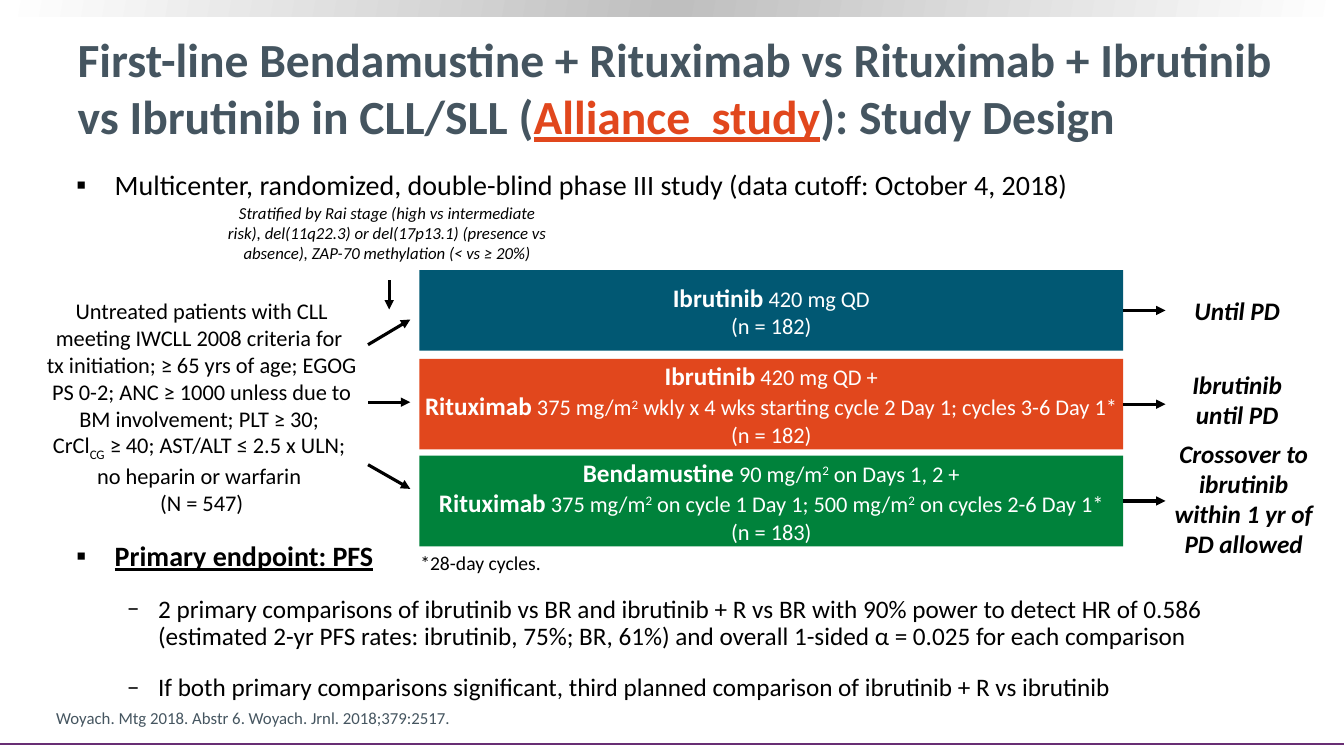
from dataclasses import dataclass
from typing import Any, NamedTuple

from lxml import etree
from pptx import Presentation
from pptx.dml.color import RGBColor
from pptx.enum import shapes, text
from pptx.oxml.ns import qn
from pptx.util import Inches, Pt

BLACK, WHITE, SLATE, ORANGE, PURPLE = "000000", "FFFFFF", "455560", "E1471D", "682E74"
LEFT, CENTER = text.PP_ALIGN.LEFT, text.PP_ALIGN.CENTER
TOP, MIDDLE, BOTTOM = text.MSO_ANCHOR.TOP, text.MSO_ANCHOR.MIDDLE, text.MSO_ANCHOR.BOTTOM


class Box(NamedTuple):
    left: float
    top: float
    width: float
    height: float

    def inches(self) -> list[int]:
        return [Inches(v) for v in self]


class Run(NamedTuple):
    text: str
    size: int
    color: str = BLACK
    bold: bool = False
    italic: bool = False
    underline: bool = False
    baseline: int = 0


Paragraphs = list[list[Run]]


@dataclass
class Label:
    box: Box
    paragraphs: Paragraphs
    align: Any = CENTER
    anchor: Any = TOP
    wrap: bool = True


@dataclass
class Arm:
    top: float
    height: float
    color: str
    paragraphs: Paragraphs
    outcome: str
    outcome_box: Box


@dataclass
class Bullet:
    run: Run
    level: int = 0


def rgb(color: str) -> RGBColor:
    return RGBColor.from_string(color)


def add_run(p: Any, run: Run) -> None:
    for i, piece in enumerate(run.text.split("\n")):
        if i:
            p.add_line_break()
        r = p.add_run()
        r.text = piece
        f = r.font
        f.name, f.size, f.color.rgb = "Calibri", Pt(run.size), rgb(run.color)
        f.bold, f.italic, f.underline = run.bold, run.italic, run.underline
        if run.baseline:
            r._r.get_or_add_rPr().set("baseline", str(run.baseline * 1000))


def fill_text(sp: Any, paragraphs: Paragraphs, align: Any, anchor: Any, wrap: bool = True) -> None:
    tf = sp.text_frame
    tf.word_wrap, tf.vertical_anchor, tf.auto_size = wrap, anchor, text.MSO_AUTO_SIZE.NONE
    for i, runs in enumerate(paragraphs):
        p = tf.paragraphs[0] if i == 0 else tf.add_paragraph()
        p.alignment = align
        for run in runs:
            add_run(p, run)


def add_label(s: Any, label: Label) -> Any:
    sp = s.shapes.add_textbox(*label.box.inches())
    fill_text(sp, label.paragraphs, label.align, label.anchor, label.wrap)
    return sp


def add_rect(s: Any, box: Box, color: str) -> Any:
    sp = s.shapes.add_shape(shapes.MSO_SHAPE.RECTANGLE, *box.inches())
    sp.shadow.inherit = False
    sp.fill.solid()
    sp.fill.fore_color.rgb = rgb(color)
    sp.line.fill.background()
    return sp


def add_line(s: Any, x1: float, y1: float, x2: float, y2: float,
             color: str = BLACK, width: float = 2.25, arrow: bool = True) -> Any:
    line = s.shapes.add_connector(shapes.MSO_CONNECTOR.STRAIGHT, *[Inches(v) for v in (x1, y1, x2, y2)])
    line.line.color.rgb, line.line.width = rgb(color), Pt(width)
    if arrow:
        etree.SubElement(line.line._get_or_add_ln(), qn("a:tailEnd"), type="triangle")
    etree.SubElement(line._element.spPr, qn("a:effectLst"))
    return line


def add_bullets(s: Any, box: Box, bullets: list[Bullet]) -> None:
    sp = add_label(s, Label(box, [[b.run] for b in bullets], LEFT))
    for p, b in zip(sp.text_frame.paragraphs, bullets):
        p.level, p.line_spacing = b.level, 0.9
        p.space_before, p.space_after = Pt(10), Pt(7)
        margin, hang, mark = [(0.38, 0.38, "▪"), (0.81, 0.31, "‒")][b.level]
        pPr = p._p.get_or_add_pPr()
        pPr.set("marL", str(Inches(margin)))
        pPr.set("indent", str(-Inches(hang)))
        etree.SubElement(etree.SubElement(pPr, qn("a:buClr")), qn("a:srgbClr"), val=BLACK)
        etree.SubElement(pPr, qn("a:buFont"), typeface="Calibri")
        etree.SubElement(pPr, qn("a:buChar"), char=mark)


def add_top_band(s: Any) -> None:
    band = add_rect(s, Box(0, 0, 13.33, 0.16), WHITE)
    band.fill.gradient()
    grad = band._element.spPr.find(qn("a:gradFill"))
    for child in list(grad):
        grad.remove(child)
    stops = etree.SubElement(grad, qn("a:gsLst"))
    for pos, color in ((0, WHITE), (50, "BFBFBF"), (100, WHITE)):
        stop = etree.SubElement(stops, qn("a:gs"), pos=str(pos * 1000))
        etree.SubElement(stop, qn("a:srgbClr"), val=color)
    etree.SubElement(grad, qn("a:lin"), ang=str(190 * 60000), scaled="0")


def drug(name: str) -> Run:
    return Run(name, 18, WHITE, bold=True)


def dose(words: str) -> list[Run]:
    """Split at ^ so that each square of a unit is raised."""
    runs: list[Run] = []
    for i, part in enumerate(words.split("^")):
        if i:
            runs.append(Run("2", 16, WHITE, baseline=30))
        runs.append(Run(part, 16, WHITE))
    return runs


ARMS = [
    Arm(2.68, 0.8, "015873",
        [[drug("Ibrutinib"), *dose(" 420 mg QD")], dose("(n = 182)")],
        "Until PD", Box(11.74, 2.88, 1.06, 0.4)),
    Arm(3.56, 0.9, ORANGE,
        [[drug("Ibrutinib"), *dose(" 420 mg QD +")],
         [drug("Rituximab"), *dose(" 375 mg/m^ wkly x 4 wks starting cycle 2 Day 1; cycles 3-6 Day 1*")],
         dose("(n = 182)")],
        "Ibrutinib until PD", Box(11.63, 3.61, 1.28, 0.71)),
    Arm(4.52, 0.9, "00823B",
        [[drug("Bendamustine"), *dose(" 90 mg/m^ on Days 1, 2 +")],
         [drug("Rituximab"), *dose(" 375 mg/m^ on cycle 1 Day 1; 500 mg/m^ on cycles 2-6 Day 1*")],
         dose("(n = 183)")],
        "Crossover to ibrutinib within 1 yr of PD allowed", Box(11.48, 4.29, 1.71, 1.31)),
]

LABELS = [
    Label(Box(0.34, 2.9, 3.32, 2.26), [
        [Run("Untreated patients with CLL meeting IWCLL 2008 criteria for \ntx initiation; ≥ 65 yrs of age; "
             "EGOG PS 0-2; ANC ≥ 1000 unless due to BM involvement; PLT ≥ 30; \nCrCl", 16),
         Run("CG", 16, baseline=-25), Run(" ≥ 40; AST/ALT ≤ 2.5 x ULN; ", 16)],
        [Run("no heparin or warfarin \n(N = 547)", 16)]]),
    Label(Box(2.09, 1.96, 3.5, 0.71), [
        [Run("Stratified by Rai stage (high vs intermediate risk), del(11q22.3) or del(17p13.1) "
             "(presence vs absence), ZAP-70 methylation (< vs ≥ 20%)", 12, italic=True)]]),
    Label(Box(4.07, 5.42, 1.41, 0.34), [[Run("*28-day cycles.", 14)]], LEFT, wrap=False),
    Label(Box(0.46, 6.97, 8.76, 0.3),
          [[Run("Woyach. Mtg 2018. Abstr 6. Woyach. Jrnl. 2018;379:2517.", 12, SLATE)]], LEFT, BOTTOM),
]


def main() -> None:
    prs = Presentation()
    prs.slide_width, prs.slide_height = Inches(13.33), Inches(7.5)
    s = prs.slides.add_slide(prs.slide_layouts[5])

    # Frame and title
    add_top_band(s)
    add_line(s, 0, 7.38, 13.33, 7.38, PURPLE, 1.5, arrow=False)
    title = s.shapes.title
    title.left, title.top, title.width, title.height = Box(0.67, 0.26, 12.19, 1.21).inches()
    fill_text(title, [[
        Run("First-line Bendamustine + Rituximab vs Rituximab + Ibrutinib vs Ibrutinib in CLL/SLL (",
            34, SLATE, bold=True),
        Run("Alliance  study", 34, ORANGE, bold=True, underline=True),
        Run("): Study Design", 34, SLATE, bold=True)]], LEFT, MIDDLE)

    # Bulleted text
    add_bullets(s, Box(0.66, 1.65, 11.9, 0.43), [Bullet(Run(
        "Multicenter, randomized, double-blind phase III study (data cutoff: October 4, 2018)", 20))])
    add_bullets(s, Box(0.66, 5.33, 11.9, 1.52), [
        Bullet(Run("Primary endpoint: PFS", 20, bold=True, underline=True)),
        Bullet(Run("2 primary comparisons of ibrutinib vs BR and ibrutinib + R vs BR with 90% power to detect "
                   "HR of 0.586 (estimated 2-yr PFS rates: ibrutinib, 75%; BR, 61%) and overall 1-sided "
                   "α = 0.025 for each comparison", 18), 1),
        Bullet(Run("If both primary comparisons significant, third planned comparison of "
                   "ibrutinib + R vs ibrutinib", 18), 1)])

    # Treatment arms, each with its outcome
    for arm in ARMS:
        sp = add_rect(s, Box(4.16, arm.top, 6.98, arm.height), arm.color)
        fill_text(sp, arm.paragraphs, CENTER, MIDDLE, wrap=False)
        y = arm.top + arm.height / 2
        add_line(s, 11.14, y, 11.56, y).begin_connect(sp, 3)
        outcome = Run(arm.outcome, 18, bold=True, italic=True)
        add_label(s, Label(arm.outcome_box, [[outcome]], anchor=MIDDLE))

    # Population, stratification and notes
    for label in LABELS:
        add_label(s, label)

    # Stratification and randomization arrows
    add_line(s, 3.86, 2.78, 3.86, 3.07)
    for y1, y2 in ((3.42, 3.17), (3.99, 3.99), (4.61, 4.85)):
        add_line(s, 3.65, y1, 4.07, y2)

    prs.save("out.pptx")


if __name__ == "__main__":
    main()
